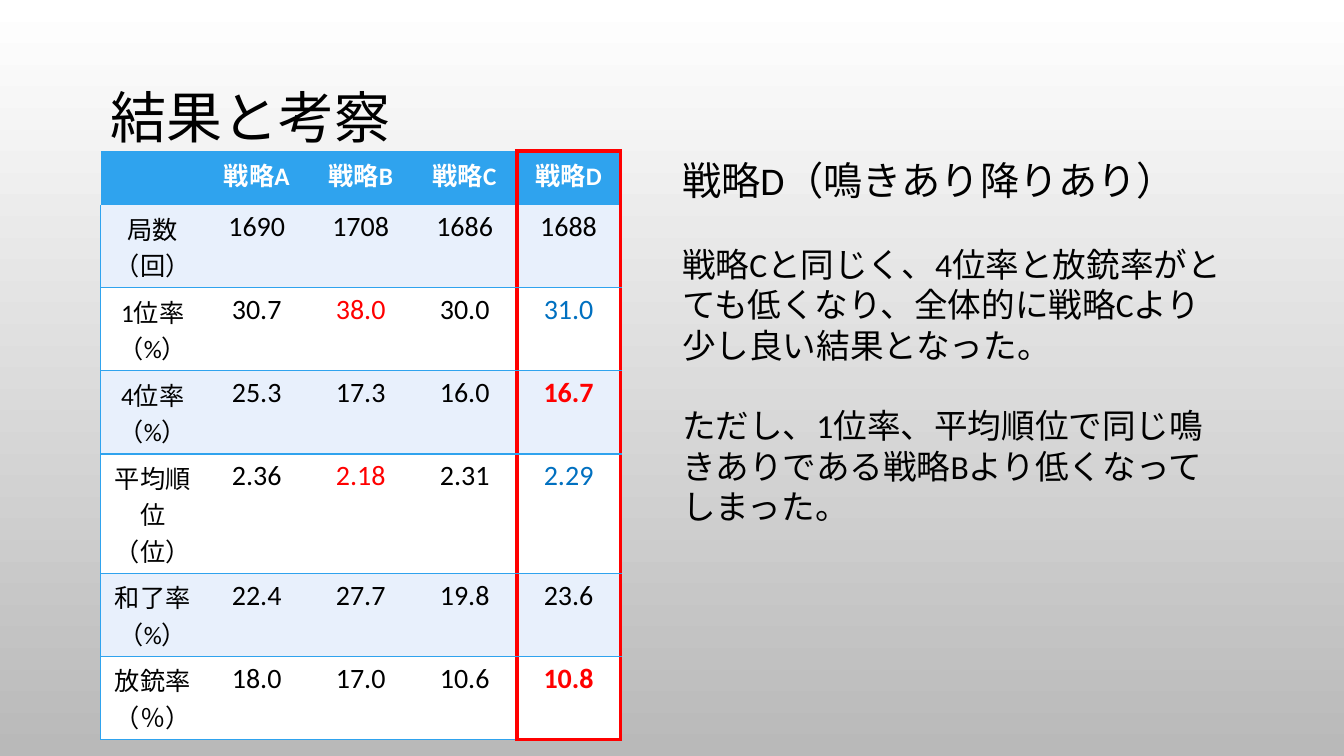
from lxml.etree import SubElement
from pptx import Presentation
from pptx.dml.color import RGBColor
from pptx.enum.lang import MSO_LANGUAGE_ID as Language
from pptx.enum.text import MSO_ANCHOR as Anchor, MSO_AUTO_SIZE as AutoSize, PP_ALIGN as Align
from pptx.oxml.ns import qn
from pptx.util import Cm, Pt

COLORS = {
    "black": "000000", "white": "FFFFFF", "gray": "B9B9B9", "header": "2FA3EE",
    "band": "E8F0FC", "red": "FF0000", "blue": "0070C0",
}
RESULTS = [
    ["", "戦略A", "戦略B", "戦略C", "戦略D"],
    ["局数（回）", "1690", "1708", "1686", "1688"],
    ["1位率（%）", "30.7", "38.0", "30.0", "31.0"],
    ["4位率（%）", "25.3", "17.3", "16.0", "16.7"],
    ["平均順位（位）", "2.36", "2.18", "2.31", "2.29"],
    ["和了率（%）", "22.4", "27.7", "19.8", "23.6"],
    ["放銃率（％）", "18.0", "17.0", "10.6", "10.8"],
]
ROW_HEIGHTS = [1.35, 1.96, 1.96, 1.96, 2.34, 1.96, 1.96]
COLUMN_WIDTH = 2.62
HIGHLIGHTS = {
    (2, 2): ("red", False), (2, 4): ("blue", False), (3, 4): ("red", True),
    (4, 2): ("red", False), (4, 4): ("blue", False), (6, 4): ("red", True),
}
DISCUSSION = [
    ("戦略D（鳴きあり降りあり）", 28),
    ("戦略Cと同じく、4位率と放銃率がとても低くなり、全体的に戦略Cより少し良い結果となった。", 24),
    ("ただし、1位率、平均順位で同じ鳴きありである戦略Bより低くなってしまった。", 24),
]


class SlideBuilder:
    """Draws styled elements on the current slide."""

    font_name = "Calibri"

    def __init__(self, slide):
        self.slide = slide

    def color(self, name):
        return RGBColor.from_string(COLORS[name])

    def background(self, top, bottom):
        fill = self.slide.background.fill
        fill.gradient()
        fill.gradient_angle = 270
        for stop, name in zip(fill.gradient_stops, (top, bottom)):
            stop.color.rgb = self.color(name)

    def run(self, paragraph, text, size, color="black", bold=False):
        run = paragraph.add_run()
        run.text = text
        font = run.font
        font.name, font.size, font.bold = self.font_name, Pt(size), bold
        font.color.rgb = self.color(color)
        font.language_id = Language.JAPANESE

    def text(self, box, paragraphs, anchor=Anchor.TOP, gap=0, line_spacing=None,
             auto_size=AutoSize.NONE):
        frame = self.slide.shapes.add_textbox(*map(Cm, box)).text_frame
        frame.word_wrap = True
        frame.auto_size = auto_size
        frame.vertical_anchor = anchor
        for index, (text, size) in enumerate(paragraphs):
            paragraph = frame.add_paragraph() if index else frame.paragraphs[0]
            if index:
                paragraph.space_before = Pt(gap)
            paragraph.line_spacing = line_spacing
            self.run(paragraph, text, size)

    def borders(self, cell, sides):
        properties = cell._tc.get_or_add_tcPr()
        for side in "LRTB":
            line = SubElement(properties, qn(f"a:ln{side}"))
            if side in sides:
                name, width = sides[side]
                line.set("w", str(Pt(width)))
                fill = SubElement(line, qn("a:solidFill"))
                SubElement(fill, qn("a:srgbClr")).set("val", COLORS[name])
            else:
                SubElement(line, qn("a:noFill"))

    def cell_sides(self, row, column, last_row, last_column):
        thin, thick = ("header", 1), ("red", 3)
        sides = {}
        if row:
            sides["B"] = thin
            if column == 0:
                sides["L"] = thin
        if row > 1:
            sides["T"] = thin
        if column == last_column - 1:
            sides["R"] = thick
        if column == last_column:
            sides["L"] = sides["R"] = thick
            if row == 0:
                sides["T"] = thick
            if row == last_row:
                sides["B"] = thick
        return sides

    def table(self, left, top, rows, heights, column_width, highlights):
        row_count, column_count = len(rows), len(rows[0])
        table = self.slide.shapes.add_table(
            row_count, column_count, Cm(left), Cm(top),
            Cm(column_width * column_count), Cm(sum(heights))).table
        table.horz_banding = False
        for column in table.columns:
            column.width = Cm(column_width)
        for row, (values, height) in enumerate(zip(rows, heights)):
            table.rows[row].height = Cm(height)
            for column, value in enumerate(values):
                cell = table.cell(row, column)
                self.borders(cell, self.cell_sides(row, column, row_count - 1, column_count - 1))
                cell.fill.solid()
                fill = "header" if row == 0 else "band" if row % 2 else "white"
                cell.fill.fore_color.rgb = self.color(fill)
                paragraph = cell.text_frame.paragraphs[0]
                paragraph.alignment = Align.CENTER
                if value:
                    size = 20 if row and column else 18
                    default = ("black", False) if row else ("white", True)
                    self.run(paragraph, value, size, *highlights.get((row, column), default))


def main():
    presentation = Presentation()
    presentation.slide_width, presentation.slide_height = Cm(33.87), Cm(19.05)
    builder = SlideBuilder(presentation.slides.add_slide(presentation.slide_layouts[6]))
    builder.background("white", "gray")
    builder.text((2.54, 1.73, 28.78, 2.59), [("結果と考察", 40)],
                 anchor=Anchor.MIDDLE, line_spacing=0.9)
    builder.table(2.54, 3.81, RESULTS, ROW_HEIGHTS, COLUMN_WIDTH, HIGHLIGHTS)
    builder.text((16.94, 3.81, 14.4, 8.64), DISCUSSION, gap=29,
                 auto_size=AutoSize.SHAPE_TO_FIT_TEXT)
    presentation.save("out.pptx")


if __name__ == "__main__":
    main()
